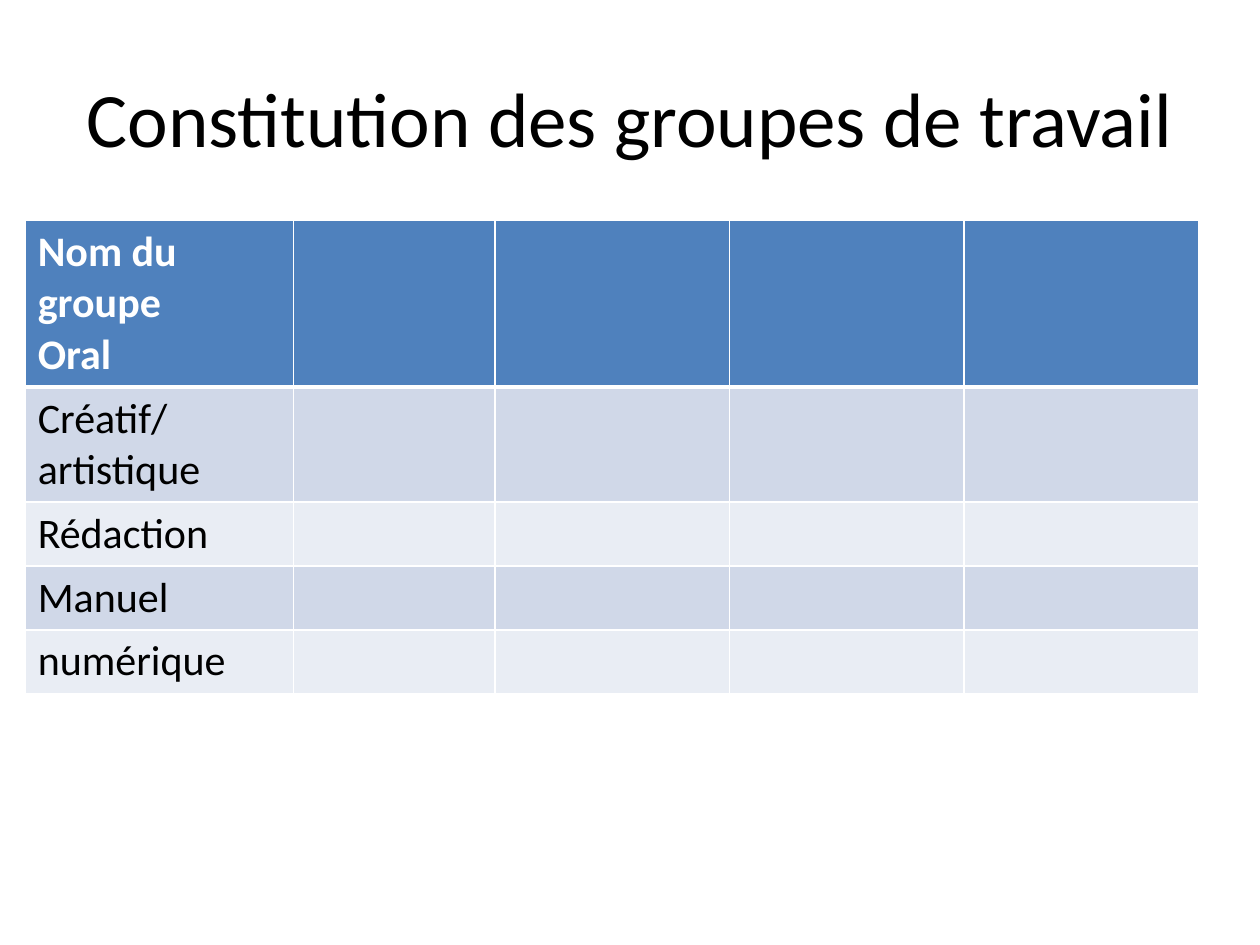
import pptx
import pptx.dml.color
import pptx.enum.text
import pptx.oxml
import pptx.oxml.ns
import pptx.util
from pptx.util import Pt

COLORS = {
    "text": "000000",
    "white": "FFFFFF",
    "header": "4F81BD",
    "odd_row": "D0D8E8",
    "even_row": "E9EDF4",
}
FONT = "Calibri"
GROUP_TASKS = ["Nom du groupe\nOral", "Créatif/artistique", "Rédaction", "Manuel", "numérique"]
COLUMN_WIDTHS = [153.2, 115.2, 134, 134, 134]
ROW_HEIGHTS = [94, 65, 36, 36, 36]


def rgb(name):
    return pptx.dml.color.RGBColor.from_string(COLORS[name])


def style_font(para, size, color, bold=False):
    para.font.name = FONT
    para.font.size = Pt(size)
    para.font.bold = bold
    para.font.color.rgb = rgb(color)


def add_title(page, text, left, top, width, height):
    title = page.shapes.title
    title.left, title.top, title.width, title.height = map(Pt, (left, top, width, height))
    frame = title.text_frame
    frame.text = text
    frame.vertical_anchor = pptx.enum.text.MSO_ANCHOR.MIDDLE
    para = frame.paragraphs[0]
    para.alignment = pptx.enum.text.PP_ALIGN.CENTER
    style_font(para, 44, "text")


def set_borders(cell, widths):
    """Draw white cell borders; widths maps L, R, T and B to points, in that order."""
    properties = cell._tc.get_or_add_tcPr()
    for side, width in widths.items():
        properties.append(pptx.oxml.parse_xml(
            f'<a:ln{side} {pptx.oxml.ns.nsdecls("a")} w="{Pt(width)}"><a:solidFill>'
            f'<a:srgbClr val="{COLORS["white"]}"/></a:solidFill></a:ln{side}>'))


def add_group_table(page, left, top):
    frame = page.shapes.add_table(
        len(ROW_HEIGHTS), len(COLUMN_WIDTHS), Pt(left), Pt(top),
        Pt(sum(COLUMN_WIDTHS)), Pt(sum(ROW_HEIGHTS)))
    table = frame.table
    for column, width in zip(table.columns, COLUMN_WIDTHS):
        column.width = Pt(width)
    for index, (row, height) in enumerate(zip(table.rows, ROW_HEIGHTS)):
        row.height = Pt(height)
        is_header = index == 0
        fill = "header" if is_header else ("odd_row" if index % 2 else "even_row")
        borders = {"L": 1, "R": 1, "T": 3 if index == 1 else 1, "B": 3 if is_header else 1}
        for cell in row.cells:
            set_borders(cell, borders)
            cell.fill.solid()
            cell.fill.fore_color.rgb = rgb(fill)
        label = row.cells[0].text_frame
        label.text = GROUP_TASKS[index]
        for para in label.paragraphs:
            style_font(para, 24, "white" if is_header else "text", is_header)


def main():
    deck = pptx.Presentation()
    deck.slide_width, deck.slide_height = Pt(720), Pt(540)
    page = deck.slides.add_slide(deck.slide_layouts.get_by_name("Title Only"))
    add_title(page, "Constitution des groupes de travail", 36, 21.6, 648, 90)
    add_group_table(page, 14.4, 126)
    deck.save("out.pptx")


if __name__ == "__main__":
    main()
